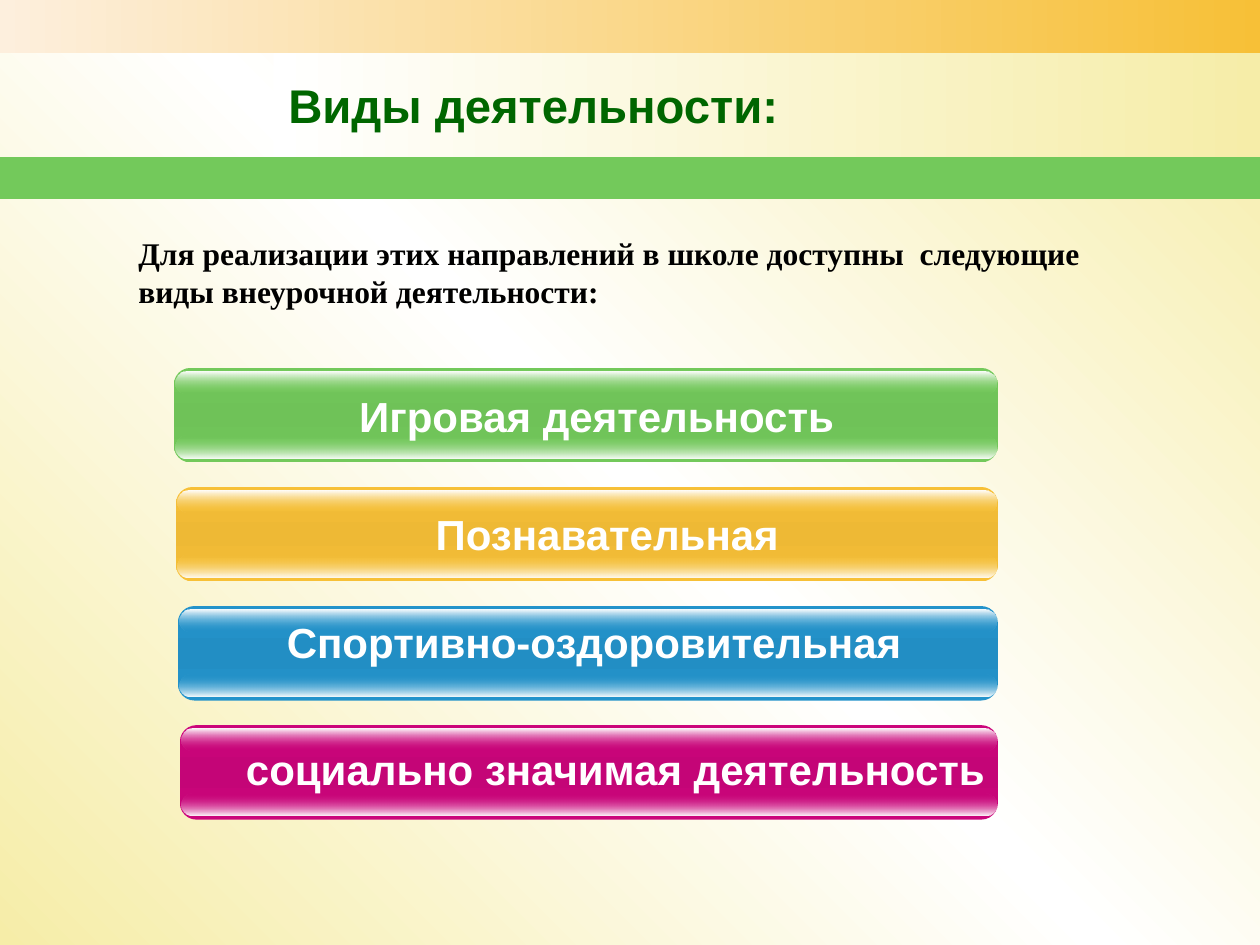
from lxml.etree import SubElement
from pptx import Presentation
from pptx.dml.color import RGBColor
from pptx.enum.shapes import MSO_SHAPE as Shape
from pptx.enum.text import MSO_ANCHOR as Anchor, PP_ALIGN as Align
from pptx.oxml.ns import qn
from pptx.util import Emu, Inches, Pt

WIDTH, HEIGHT = 10, 7.5
COLORS = {
    "cream": "F6EDA8", "white": "FFFFFF", "black": "000000",
    "pale": "FDEFDD", "title": "006600",
    "green": "73C95B", "green_mid": "6FC258",
    "gold": "F7C037", "gold_mid": "EEB935",
    "blue": "2393CB", "blue_mid": "228EC4",
    "pink": "CB057B", "pink_mid": "C40577",
}

TITLE = "Виды деятельности: "
INTRO = ("Для реализации этих направлений в школе доступны  следующие "
         "виды внеурочной деятельности:")
# color, label, label box (left, width, offset from the top of its bar)
ACTIVITIES = [
    ("green", "\tИгровая деятельность", 1.44, 6.09, 0.13),
    ("gold", "\tПознавательная ", 1.69, 5.85, 0.12),
    ("blue", "\tСпортивно-оздоровительная", 1.38, 6.17, 0.03),
    ("pink", "социально значимая деятельность", 1.39, 6.99, 0.1),
]
# left, top, width, height, gradient stops
BANDS = [
    (0, 0, WIDTH, 0.42, [(0, "pale"), (100, "gold")]),
    (2.17, 0.42, WIDTH - 2.17, 0.83, [(0, "white"), (100, "cream")]),
    (0, 1.25, WIDTH, 0.33, [(0, "green"), (100, "green")]),
]

BAR_LEFT, BAR_STEP_IN, BAR_RIGHT = 1.38, 0.016, 7.92
BAR_TOP, BAR_PITCH, BAR_HEIGHT = 2.92, 0.945, 0.75
GLOW_INSET, GLOW_HEIGHT = 0.015, 0.18
GLOW_OFFSETS = 0.54, 0.025


def set_gradient(fill, element, stops, angle):
    """Fill with (percent, color[, opacity percent]) stops, angle clockwise."""
    fill.gradient()
    gradient = element.xpath(".//a:gradFill")[0]
    for child in list(gradient):
        gradient.remove(child)
    stop_list = SubElement(gradient, qn("a:gsLst"))
    for position, color, *opacity in stops:
        stop = SubElement(stop_list, qn("a:gs"), pos=str(position * 1000))
        tint = SubElement(stop, qn("a:srgbClr"), val=COLORS[color])
        for share in opacity:
            SubElement(tint, qn("a:alpha"), val=str(share * 1000))
    SubElement(gradient, qn("a:lin"), ang=str(angle * 60000), scaled="0")


def add_block(page, kind, place, stops, angle, rounding=None):
    block = page.shapes.add_shape(kind, *map(Inches, place))
    block.shadow.inherit = False
    block.line.fill.background()
    if rounding is not None:
        block.adjustments[0] = rounding
    set_gradient(block.fill, block.element, stops, angle)


def add_text(page, place, text, size, color, font="Arial",
             align=Align.CENTER, anchor=Anchor.TOP, hanging=0):
    box = page.shapes.add_textbox(*map(Inches, place))
    frame = box.text_frame
    frame.word_wrap = True
    frame.vertical_anchor = anchor
    para = frame.paragraphs[0]
    para.alignment = align
    if hanging:
        properties = para._p.get_or_add_pPr()
        properties.set("marL", str(Inches(hanging)))
        properties.set("indent", str(Emu(-Inches(hanging))))
    span = para.add_run()
    span.text = text
    span.font.name = font
    span.font.size = Pt(size)
    span.font.bold = True
    span.font.color.rgb = RGBColor.from_string(COLORS[color])


def add_bar(page, row, color):
    left, top = BAR_LEFT + row * BAR_STEP_IN, BAR_TOP + row * BAR_PITCH
    width = BAR_RIGHT - left
    add_block(page, Shape.ROUNDED_RECTANGLE, (left, top, width, BAR_HEIGHT),
              [(0, color), (50, color + "_mid"), (100, color)], 90, 0.175)
    glows = ([(0, color, 0), (100, "white")], [(0, "white"), (100, color, 0)])
    for offset, stops in zip(GLOW_OFFSETS, glows):
        place = (left + GLOW_INSET, top + offset,
                 width - 2 * GLOW_INSET, GLOW_HEIGHT)
        add_block(page, Shape.ROUNDED_RECTANGLE, place, stops, 90, 0.5)


def main():
    deck = Presentation()
    deck.slide_width, deck.slide_height = Inches(WIDTH), Inches(HEIGHT)
    page = deck.slides.add_slide(deck.slide_layouts[6])
    set_gradient(page.background.fill, page.element,
                 [(0, "cream"), (50, "white"), (100, "cream")], 315)

    for *place, stops in BANDS:
        add_block(page, Shape.RECTANGLE, place, stops, 0)
    add_text(page, (0.5, 0.42, 7.57, 0.82), TITLE, 27, "title",
             anchor=Anchor.MIDDLE)

    for row, (color, *_) in enumerate(ACTIVITIES):
        add_bar(page, row, color)
    for row, (_, label, left, width, offset) in enumerate(ACTIVITIES):
        top = BAR_TOP + row * BAR_PITCH + offset
        add_text(page, (left, top, width, 0.5), label, 24, "white",
                 hanging=0.5)
    add_text(page, (1, 1.81, 7.7, 0.71), INTRO, 18, "black",
             font="Times New Roman", align=Align.LEFT)

    deck.save("out.pptx")


if __name__ == "__main__":
    main()
